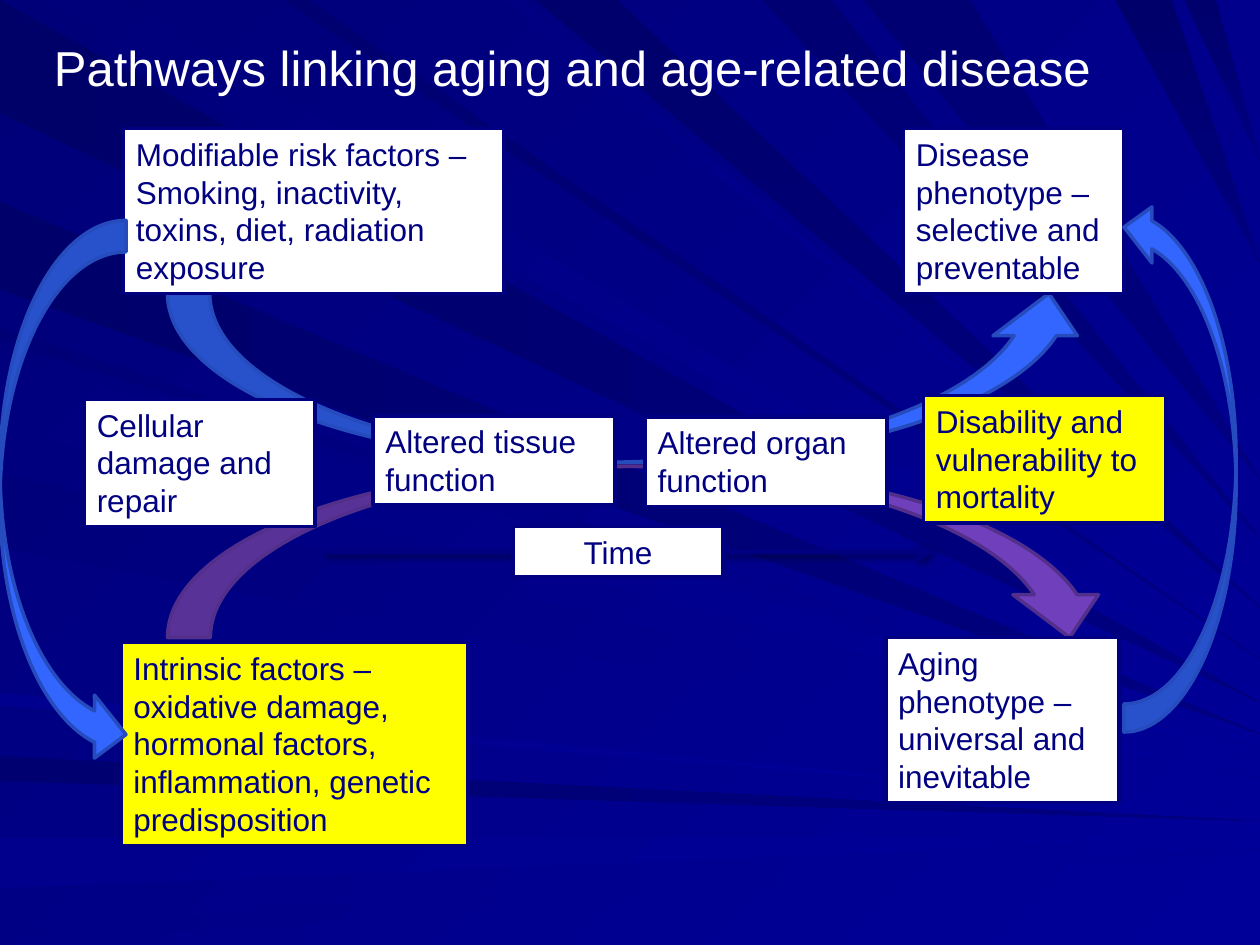
from dataclasses import dataclass

import pptx
import pptx.dml.color
import pptx.enum.shapes
import pptx.enum.text
import pptx.oxml
import pptx.oxml.ns
import pptx.util
from pptx.util import Inches

SHAPE = pptx.enum.shapes.MSO_SHAPE
ALIGN = pptx.enum.text.PP_ALIGN


@dataclass(frozen=True)
class Theme:
    font: str = "Arial"
    title_size: int = 28
    body_size: int = 18
    navy: str = "000080"
    deep_blue: str = "000099"
    midnight: str = "000078"
    white: str = "FFFFFF"
    yellow: str = "FFFF00"
    blue: str = "3366FF"
    blue_edge: str = "264BBD"
    purple: str = "6F3FBC"
    purple_edge: str = "522F8B"


@dataclass(frozen=True)
class Box:
    left: float
    top: float
    width: float
    height: float

    def inner(self, dx, dy, width, height):
        return Box(self.left + dx, self.top + dy, width, height)

    def lengths(self):
        return [Inches(v) for v in (self.left, self.top, self.width, self.height)]


THEME = Theme()

# Rays: start and end along the edge, and the colour there
LEFT_RAYS = [(0, 0.9, "000069"), (6, 6.2, "000071"), (6.65, 7.05, "00008C"),
             (7.35, 7.5, "000085"), (2.6, 2.7, "000076"), (1.6, 2.3, "00006B"),
             (2.8, 3.4, "00007E"), (3.75, 4.35, "00007B"), (5.5, 5.6, "00008E")]
TOP_RAYS = [(0.25, 1, "00007B"), (4, 4.15, "000083"), (4.25, 4.9, "00006D"),
            (6.05, 6.6, "000073"), (8.85, 9.3, "00006B"), (9.4, 9.65, "00006D"),
            (2.25, 2.45, "000070"), (6.85, 7.7, "000073")]

# Stages of the pathway: left and top in the diagram, width, text lines, wording
STAGES = [
    (6.36, 4.04, 1.85, 4, "Aging phenotype – universal and inevitable"),
    (0.31, 0, 3.02, 4,
     "Modifiable risk factors –\nSmoking, inactivity, toxins, diet, radiation exposure"),
    (6.5, 0, 1.75, 4, "Disease phenotype – selective and preventable"),
    (4.45, 2.29, 1.92, 2, "Altered organ function"),
    (2.29, 2.28, 1.92, 2, "Altered tissue function"),
    (0, 2.15, 1.83, 3, "Cellular damage and repair"),
]
HIGHLIGHTED_STAGES = [
    (6.66, 2.12, 1.92, 3, "Disability and vulnerability to mortality"),
    (0.29, 4.08, 2.75, 5,
     "Intrinsic factors –\noxidative damage, hormonal factors, inflammation, genetic predisposition"),
]


def rgb(color):
    return pptx.dml.color.RGBColor.from_string(color)


def paint_gradient(fill, start, end, angle):
    fill.gradient()
    fill.gradient_angle = (360 - angle) % 360
    for stop, color in zip(fill.gradient_stops, (start, end)):
        stop.color.rgb = rgb(color)


def write(shape, text, size=THEME.body_size, color=THEME.navy, align=ALIGN.LEFT):
    frame = shape.text_frame
    frame.word_wrap = True
    frame.auto_size = pptx.enum.text.MSO_AUTO_SIZE.SHAPE_TO_FIT_TEXT
    frame.vertical_anchor = pptx.enum.text.MSO_ANCHOR.TOP
    frame.text = text
    for paragraph in frame.paragraphs:
        paragraph.alignment = align
        font = paragraph.runs[0].font
        font.name, font.size = THEME.font, pptx.util.Pt(size)
        font.color.rgb = rgb(color)


def add_outlined(slide, kind, box, fill, edge):
    shape = slide.shapes.add_shape(kind, *box.lengths())
    shape.shadow.inherit = False
    shape.fill.solid()
    shape.fill.fore_color.rgb = rgb(fill)
    shape.line.color.rgb = rgb(edge)
    shape.line.width = pptx.util.Pt(2)
    return shape


def add_label(slide, box, text, fill=THEME.white, **text_format):
    write(add_outlined(slide, SHAPE.RECTANGLE, box, fill, THEME.navy), text, **text_format)


def draw_ray(slide, box, base, color, dark_angle):
    # Every ray aims at one focus beyond the right edge and ends on that edge
    focus_x, focus_y = box.width + 2, box.height - 0.9
    middle_x, middle_y = (sum(axis) / len(base) for axis in zip(*base))
    reach = (box.width - middle_x) / (focus_x - middle_x)
    tip = (box.width, middle_y + reach * (focus_y - middle_y))
    corners = [(Inches(box.left + x), Inches(box.top + y)) for x, y in (*base, tip)]
    outline = slide.shapes.build_freeform(*corners[0])
    outline.add_line_segments(corners[1:], close=True)
    ray = outline.convert_to_shape()
    ray.shadow.inherit = False
    ray.line.fill.background()
    if color < "000074":
        paint_gradient(ray.fill, color, THEME.navy, dark_angle)
    else:
        paint_gradient(ray.fill, color, THEME.deep_blue, 45)


def draw_backdrop(slide, box):
    paint_gradient(slide.background.fill, THEME.midnight, THEME.deep_blue, 45)
    for start, end, color in LEFT_RAYS:
        draw_ray(slide, box, [(0, start), (0, end)], color, dark_angle=0)
    for start, end, color in TOP_RAYS:
        draw_ray(slide, box, [(start, 0), (end, 0)], color, dark_angle=90)


def draw_title(slide, box):
    title = slide.shapes.add_textbox(*box.lengths())
    write(title, "Pathways linking aging and age-related disease",
          size=THEME.title_size, color=THEME.white)


def draw_timeline(slide, box):
    middle = Inches(box.top + box.height / 2)
    axis = slide.shapes.add_connector(
        pptx.enum.shapes.MSO_CONNECTOR.STRAIGHT,
        Inches(box.left), middle, Inches(box.left + box.width), middle)
    axis.line.color.rgb = rgb(THEME.navy)
    axis.line.width = pptx.util.Pt(3)
    ns = pptx.oxml.ns.nsdecls("a")
    properties = axis._element.spPr
    properties.find(pptx.oxml.ns.qn("a:ln")).append(
        pptx.oxml.parse_xml(f'<a:tailEnd {ns} type="arrow"/>'))
    # Soft shadow straight below the axis
    properties.append(pptx.oxml.parse_xml(
        f'<a:effectLst {ns}><a:outerShdw blurRad="39370" dist="22860" dir="5400000">'
        '<a:srgbClr val="000000"><a:alpha val="35000"/></a:srgbClr></a:outerShdw></a:effectLst>'))
    add_label(slide, box.inner(1.48, 0, 1.67, box.height), "Time", align=ALIGN.CENTER)


def draw_pathways(slide, box):
    # Sweeping arrows lie behind the stages
    add_outlined(slide, SHAPE.CURVED_UP_ARROW, box.inner(0.66, 1.31, 7.33, 1.34),
                 THEME.blue, THEME.blue_edge)
    add_outlined(slide, SHAPE.CURVED_DOWN_ARROW, box.inner(0.66, 2.68, 7.5, 1.36),
                 THEME.purple, THEME.purple_edge)
    for fill, stages in ((THEME.white, STAGES), (THEME.yellow, HIGHLIGHTED_STAGES)):
        for dx, dy, width, lines, text in stages:
            add_label(slide, box.inner(dx, dy, width, 0.11 + 0.3 * lines), text, fill)


def draw_loop(slide, box, rotation):
    # A quarter turn swaps width and height about the same centre
    shift = (box.width - box.height) / 2
    unturned = box.inner(shift, -shift, box.height, box.width)
    loop = add_outlined(slide, SHAPE.CURVED_UP_ARROW, unturned, THEME.blue, THEME.blue_edge)
    loop.rotation = rotation


def main():
    deck = pptx.Presentation()
    deck.slide_width, deck.slide_height = Inches(10), Inches(7.5)
    slide = deck.slides.add_slide(deck.slide_layouts[6])
    draw_backdrop(slide, Box(0, 0, 10, 7.5))
    draw_timeline(slide, Box(2.59, 4.18, 4.82, 0.4))
    draw_pathways(slide, Box(0.67, 1.02, 8.58, 5.69))
    draw_loop(slide, Box(8.92, 1.58, 0.89, 4.23), rotation=270)
    draw_title(slide, Box(0.33, 0.25, 9.42, 0.57))
    draw_loop(slide, Box(0, 1.75, 1, 4.33), rotation=90)
    deck.save("out.pptx")


if __name__ == "__main__":
    main()
